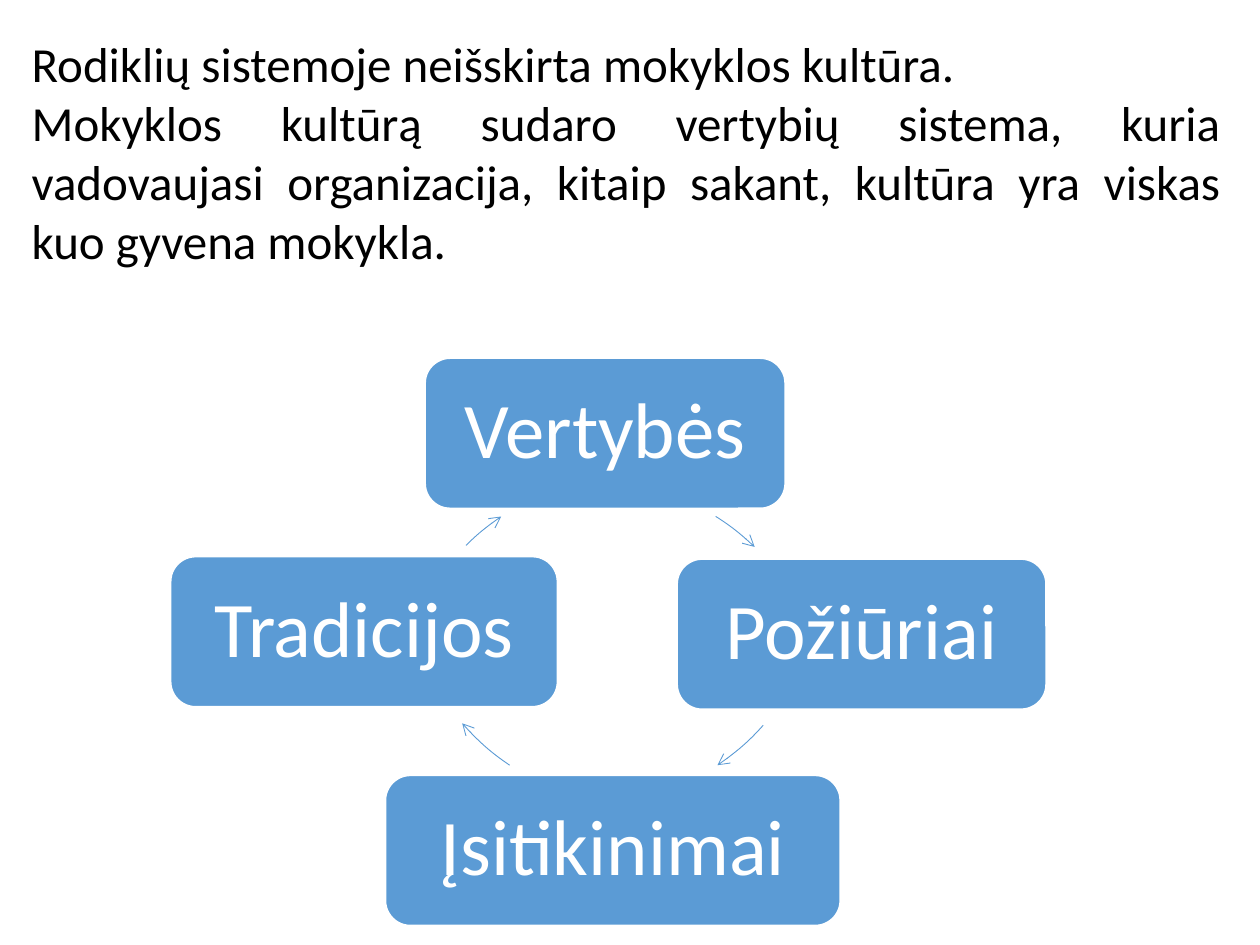
import math
from lxml import etree
from pptx import Presentation
from pptx.dml.color import RGBColor
from pptx.enum import shapes, text
from pptx.oxml.ns import qn
from pptx.util import Cm, Pt

COLORS = {"text": "000000", "blue": "5B9BD5", "white": "FFFFFF"}
INTRO = [
    "Rodiklių sistemoje neišskirta mokyklos kultūra.",
    "Mokyklos kultūrą sudaro vertybių sistema, kuria vadovaujasi organizacija, "
    "kitaip sakant, kultūra yra viskas kuo gyvena mokykla.",
]
# Cycle boxes: label, left, top, width (cm)
BOXES = [
    ("Vertybės", 8.57, 7.22, 7.26),
    ("Požiūriai", 13.65, 11.27, 7.44),
    ("Įsitikinimai", 7.77, 15.63, 9.17),
    ("Tradicijos", 3.44, 11.22, 7.8),
]
BOX_HEIGHT = 3.03
# Cycle arrows: left and top of the circle (cm), start and end angle (degrees clockwise)
ARCS = [
    (6.72, 9.63, 302.4, 313.8),
    (6.63, 6.25, 41.9, 55.9),
    (8.07, 6.25, 124.1, 138.7),
    (7.9, 9.55, 225.4, 235.9),
]
RADIUS = 5.02
INTRO_FORMAT = {"name": "Calibri", "size": Pt(28)}
BOX_FORMAT = {"name": "Calibri", "size": Pt(45)}
BOX_FRAME = {
    "word_wrap": True,
    "vertical_anchor": text.MSO_ANCHOR.MIDDLE,
    **{f"margin_{side}": Cm(0.63) for side in ("left", "right", "top", "bottom")},
}


def rgb(name):
    return RGBColor.from_string(COLORS[name])


def apply(obj, values):
    for key, value in values.items():
        setattr(obj, key, value)


def write(p, words, fmt, color):
    r = p.add_run()
    r.text = words
    apply(r.font, fmt)
    r.font.color.rgb = rgb(color)


def set_line(sp, color, width):
    sp.shadow.inherit = False
    sp.line.color.rgb = rgb(color)
    sp.line.width = Pt(width)


def add_xml(parent, tag, **values):
    return etree.SubElement(parent, qn(tag), {k: str(v) for k, v in values.items()})


def add_box(slide, label, left, top, width):
    sp = slide.shapes.add_shape(shapes.MSO_SHAPE.ROUNDED_RECTANGLE,
                                Cm(left), Cm(top), Cm(width), Cm(BOX_HEIGHT))
    sp.fill.solid()
    sp.fill.fore_color.rgb = rgb("blue")
    set_line(sp, "white", 1)
    apply(sp.text_frame, BOX_FRAME)
    p = sp.text_frame.paragraphs[0]
    apply(p, {"alignment": text.PP_ALIGN.CENTER, "line_spacing": 0.9})
    write(p, label, BOX_FORMAT, "white")


def add_arc(slide, left, top, start, end):
    # The frame holds the whole circle; its outline then becomes one arc
    size = 2 * RADIUS
    builder = slide.shapes.build_freeform(Cm(left), Cm(top))
    builder.add_line_segments([(Cm(left + size), Cm(top + size))], close=False)
    sp = builder.convert_to_shape()
    outline = next(sp.element.iter(qn("a:path")))
    for step in list(outline):
        outline.remove(step)
    angle = math.radians(start)
    add_xml(add_xml(outline, "a:moveTo"), "a:pt",
            x=Cm(RADIUS * (1 + math.cos(angle))), y=Cm(RADIUS * (1 + math.sin(angle))))
    add_xml(outline, "a:arcTo", wR=Cm(RADIUS), hR=Cm(RADIUS),
            stAng=round(start * 60000), swAng=round((end - start) * 60000))
    sp.fill.background()
    set_line(sp, "blue", 0.5)
    add_xml(sp.line._get_or_add_ln(), "a:tailEnd", type="arrow")


prs = Presentation()
prs.slide_width, prs.slide_height = Cm(25.4), Cm(19.05)
s = prs.slides.add_slide(prs.slide_layouts[6])

# Introduction
tf = s.shapes.add_textbox(Cm(0.39), Cm(0.56), Cm(24.46), Cm(6.25)).text_frame
tf.word_wrap = True
for i, words in enumerate(INTRO):
    p = tf.add_paragraph() if i else tf.paragraphs[0]
    p.alignment = text.PP_ALIGN.JUSTIFY
    write(p, words, INTRO_FORMAT, "text")

# Cycle: each box is followed by the arrow to the next one
for box, arc in zip(BOXES, ARCS):
    add_box(s, *box)
    add_arc(s, *arc)

prs.save("out.pptx")
